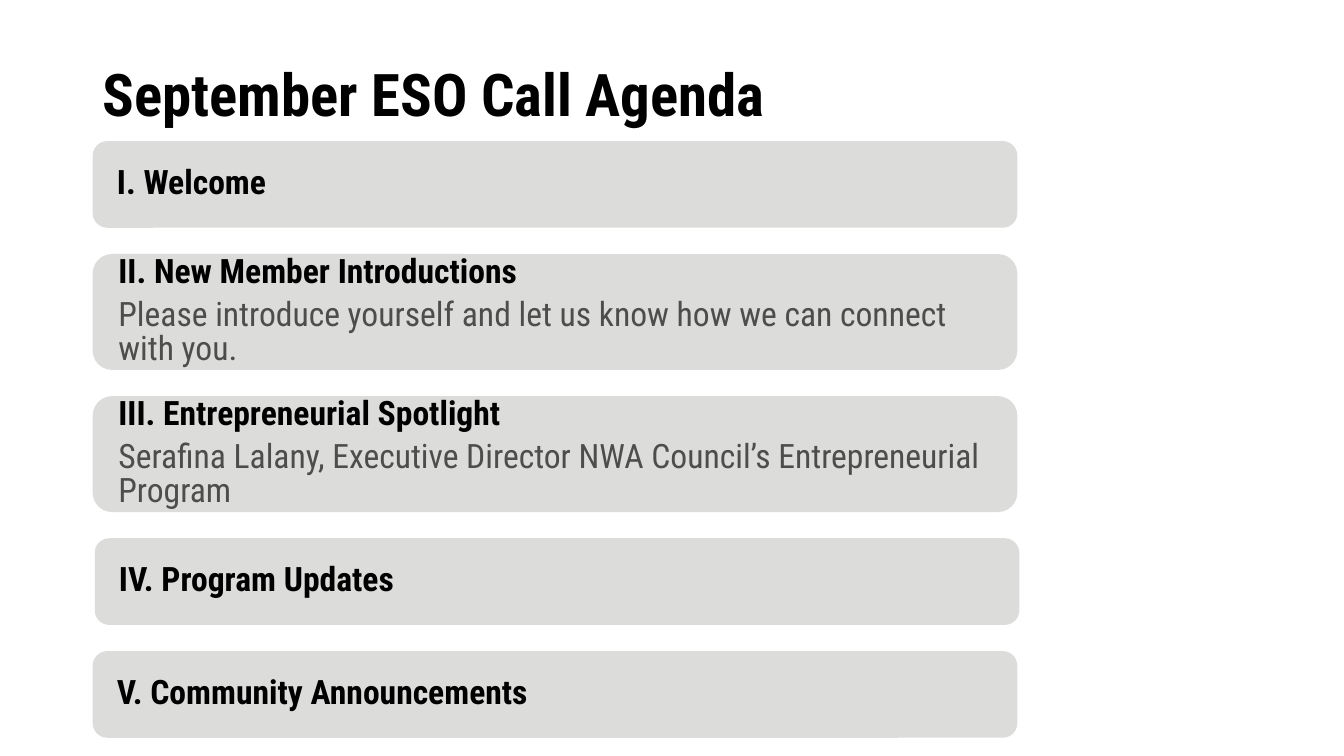
from pptx import Presentation
from pptx.dml.color import RGBColor
from pptx.enum.shapes import MSO_SHAPE
from pptx.enum.text import MSO_ANCHOR, PP_ALIGN
from pptx.util import Inches, Pt

COLORS = {"heading": "000000", "detail": "4D4D4C", "card": "DCDCDB"}

# Agenda entries: heading, detail line, shift to the right
AGENDA = [
    ("I. Welcome", None, 0),
    ("II. New Member Introductions",
     "Please introduce yourself and let us know how we can connect with you.", 0),
    ("III. Entrepreneurial Spotlight",
     "Serafina Lalany, Executive Director NWA Council’s Entrepreneurial Program", 0),
    ("IV. Program Updates", None, 0.02),
    ("V. Community Announcements", None, 0),
]
LEFT, TOP, CARD_WIDTH = 0.92, 1.4, 9.17
SHORT_CARD, TALL_CARD, GAP = 0.86, 1.15, 0.26


def write(paragraph, text, *, size=24, color="heading", bold=True,
          line_spacing=0.85, space_after=6, indent=0.1):
    properties = paragraph._p.get_or_add_pPr()
    properties.set("marL", str(Inches(indent)))
    properties.set("indent", "0")
    paragraph.alignment = PP_ALIGN.LEFT
    paragraph.line_spacing = line_spacing
    paragraph.space_after = Pt(space_after)
    run = paragraph.add_run()
    run.text = text
    run.font.name = "Roboto Condensed"
    run.font.size = Pt(size)
    run.font.bold = bold
    run.font.color.rgb = RGBColor.from_string(COLORS[color])


class AgendaSlide:
    def __init__(self, presentation):
        self.slide = presentation.slides.add_slide(presentation.slide_layouts[6])

    def prepare_frame(self, shape, inset):
        frame = shape.text_frame
        frame.word_wrap = True
        frame.vertical_anchor = MSO_ANCHOR.MIDDLE
        frame.margin_left = frame.margin_right = Inches(0.1)
        frame.margin_top = frame.margin_bottom = Inches(inset)
        return frame

    def title(self, text, left, top, width, height):
        shape = self.slide.shapes.add_textbox(
            Inches(left), Inches(top), Inches(width), Inches(height))
        frame = self.prepare_frame(shape, inset=0.05)
        write(frame.paragraphs[0], text, size=42, line_spacing=0.9,
              space_after=0, indent=0)

    def card(self, heading, detail, left, top, width, height):
        shape = self.slide.shapes.add_shape(
            MSO_SHAPE.ROUNDED_RECTANGLE,
            Inches(left), Inches(top), Inches(width), Inches(height))
        shape.shadow.inherit = False
        shape.fill.solid()
        shape.fill.fore_color.rgb = RGBColor.from_string(COLORS["card"])
        shape.line.fill.background()
        frame = self.prepare_frame(shape, inset=0.1)
        write(frame.paragraphs[0], heading)
        if detail:
            write(frame.add_paragraph(), detail, color="detail", bold=False)


def main():
    presentation = Presentation()
    presentation.slide_width = Inches(13.33)
    presentation.slide_height = Inches(7.5)
    agenda = AgendaSlide(presentation)

    # Title
    agenda.title("September ESO Call Agenda", LEFT, 0.24, 11.5, 1.45)

    # Agenda cards, stacked with equal gaps
    top = TOP
    for heading, detail, shift in AGENDA:
        height = TALL_CARD if detail else SHORT_CARD
        agenda.card(heading, detail, LEFT + shift, top, CARD_WIDTH, height)
        top += height + GAP

    presentation.save("out.pptx")


if __name__ == "__main__":
    main()
